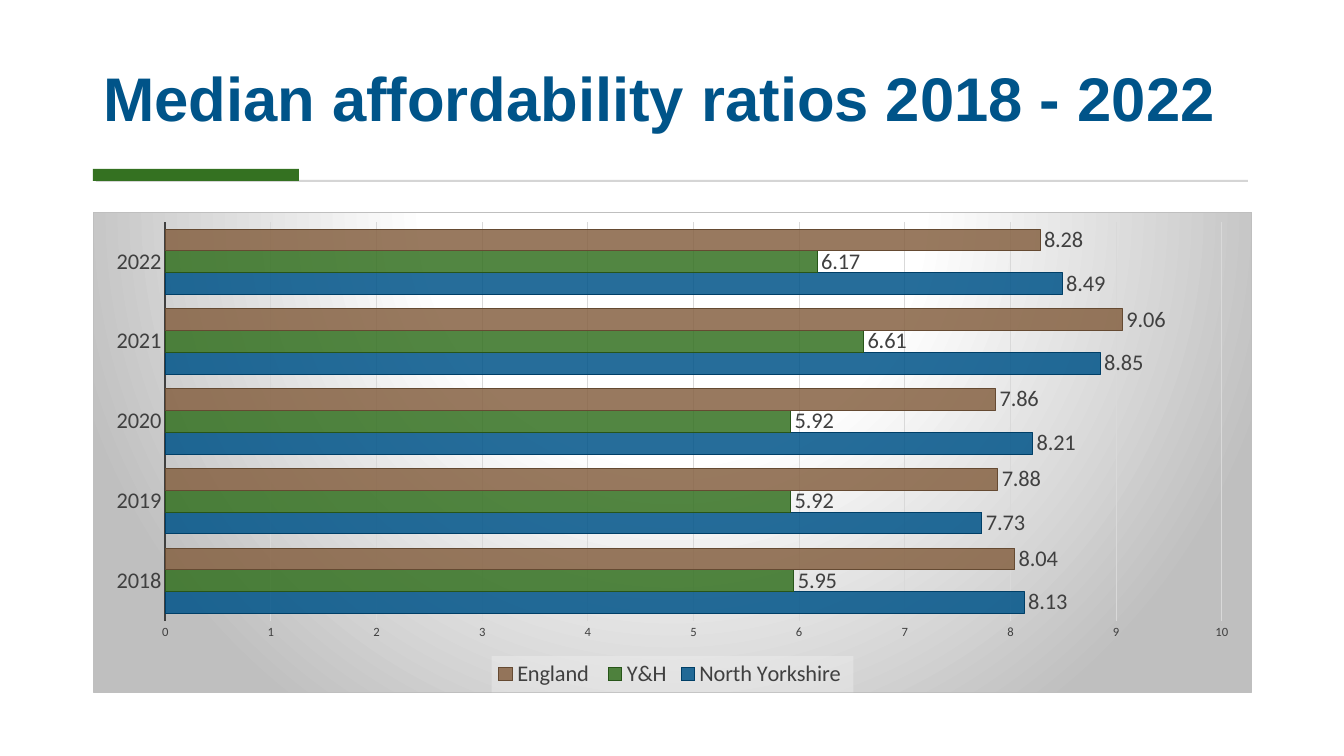
from dataclasses import dataclass

from lxml.etree import SubElement
from pptx import Presentation
from pptx.chart.chart import Chart
from pptx.chart.data import CategoryChartData
from pptx.dml.color import RGBColor
from pptx.dml.fill import FillFormat
from pptx.dml.line import LineFormat
from pptx.enum.chart import XL_CHART_TYPE, XL_LABEL_POSITION, XL_LEGEND_POSITION, XL_TICK_MARK
from pptx.enum.shapes import MSO_SHAPE
from pptx.enum.text import MSO_ANCHOR, MSO_AUTO_SIZE, PP_ALIGN
from pptx.oxml import parse_xml
from pptx.oxml.ns import nsdecls, qn
from pptx.slide import Slide
from pptx.text.text import Font
from pptx.util import Emu, Pt

SLIDE_WIDTH, SLIDE_HEIGHT = 1344, 756
EMU_PER_PX = 12192000 / SLIDE_WIDTH
BLUE, GREEN, BROWN = "005489", "347121", "866243"
TEXT_GREY, GRID_GREY, BORDER_GREY = "404040", "D9D9D9", "BFBFBF"
YEARS = ["2018", "2019", "2020", "2021", "2022"]


@dataclass(frozen=True)
class Box:
    left: int
    top: int
    width: int
    height: int

    def emu(self) -> list[Emu]:
        return [px(n) for n in (self.left, self.top, self.width, self.height)]


@dataclass(frozen=True)
class Bar:
    box: Box
    color: str


@dataclass(frozen=True)
class Region:
    name: str
    ratios: list[float]
    color: str
    outline: str


TITLE_BOX = Box(93, 28, 1158, 112)
CHART_BOX = Box(93, 212, 1159, 481)
BARS = [
    Bar(Box(96, 180, 1152, 2), "D5D5D5"),
    Bar(Box(93, 169, 206, 12), GREEN),
]
REGIONS = [
    Region("North Yorkshire ", [8.13, 7.73, 8.21, 8.85, 8.49], BLUE, "003F67"),
    Region("Y&H", [5.95, 5.92, 5.92, 6.61, 6.17], GREEN, "275519"),
    Region("England ", [8.04, 7.88, 7.86, 9.06, 8.28], BROWN, "654A32"),
]
CHART_FRAME = f"""<c:spPr {nsdecls("c", "a")}>
  <a:gradFill>
    <a:gsLst>
      <a:gs pos="0"><a:srgbClr val="FFFFFF"/></a:gs>
      <a:gs pos="39000"><a:srgbClr val="FFFFFF"/></a:gs>
      <a:gs pos="100000"><a:srgbClr val="{BORDER_GREY}"/></a:gs>
    </a:gsLst>
    <a:path path="circle">
      <a:fillToRect l="50000" t="-80000" r="50000" b="180000"/>
    </a:path>
  </a:gradFill>
  <a:ln w="9525"><a:solidFill><a:srgbClr val="{BORDER_GREY}"/></a:solidFill></a:ln>
</c:spPr>"""
LEGEND_FRAME = f"""<c:spPr {nsdecls("c", "a")}>
  <a:solidFill><a:srgbClr val="F2F2F2"><a:alpha val="39000"/></a:srgbClr></a:solidFill>
  <a:ln><a:noFill/></a:ln>
</c:spPr>"""
PLOT_FRAME = f'<c:spPr {nsdecls("c", "a")}><a:noFill/><a:ln><a:noFill/></a:ln></c:spPr>'


def px(length: int) -> Emu:
    return Emu(round(length * EMU_PER_PX))


def assign(target: object, formats: dict[str, object]) -> None:
    for name, value in formats.items():
        setattr(target, name, value)


def paint(fill: FillFormat, color: str, opacity: int = 100) -> None:
    fill.solid()
    fill.fore_color.rgb = RGBColor.from_string(color)
    if opacity < 100:
        # The alpha child belongs to the colour element of this fill.
        for element in fill._xPr.findall(f"{qn('a:solidFill')}/{qn('a:srgbClr')}"):
            SubElement(element, qn("a:alpha")).set("val", str(opacity * 1000))


def draw_line(line: LineFormat, color: str, width: float) -> None:
    paint(line.fill, color)
    line.width = Pt(width)


def set_font(font: Font, size: int, color: str, name: str = "Calibri", bold: bool = False) -> None:
    assign(font, {"size": Pt(size), "name": name, "bold": bold})
    paint(font.fill, color)


def add_title(page: Slide) -> None:
    title = page.shapes.title
    assign(title, dict(zip(("left", "top", "width", "height"), TITLE_BOX.emu())))
    frame = title.text_frame
    frame.text = "Median affordability ratios 2018 - 2022"
    assign(frame, {
        "vertical_anchor": MSO_ANCHOR.BOTTOM,
        "word_wrap": True,
        "auto_size": MSO_AUTO_SIZE.NONE,
    })
    para = frame.paragraphs[0]
    assign(para, {"alignment": PP_ALIGN.LEFT, "line_spacing": 0.9})
    set_font(para.runs[0].font, 44, BLUE, "Arial", True)


def add_bar(page: Slide, bar: Bar) -> None:
    shape = page.shapes.add_shape(MSO_SHAPE.RECTANGLE, *bar.box.emu())
    shape.shadow.inherit = False
    paint(shape.fill, bar.color)
    shape.line.fill.background()


def format_axes(chart: Chart) -> None:
    years, ratios = chart.category_axis, chart.value_axis
    for axis, size in ((years, 16), (ratios, 9)):
        assign(axis, {
            "major_tick_mark": XL_TICK_MARK.NONE,
            "minor_tick_mark": XL_TICK_MARK.NONE,
        })
        set_font(axis.tick_labels.font, size, TEXT_GREY)
    draw_line(years.format.line, TEXT_GREY, 1.5)
    assign(ratios, {"minimum_scale": 0, "maximum_scale": 10, "major_unit": 1})
    ratios.format.line.fill.background()
    draw_line(ratios.major_gridlines.format.line, GRID_GREY, 0.75)


def format_series(chart: Chart) -> None:
    plot = chart.plots[0]
    assign(plot, {"gap_width": 65, "overlap": 0, "vary_by_categories": False})
    for series, region in zip(plot.series, REGIONS):
        paint(series.format.fill, region.color, 85)
        draw_line(series.format.line, region.outline, 0.75)
        labels = series.data_labels
        assign(labels, {"show_value": True, "position": XL_LABEL_POSITION.OUTSIDE_END})
        set_font(labels.font, 16, TEXT_GREY)


def format_legend(chart: Chart) -> None:
    chart.has_legend = True
    legend = chart.legend
    assign(legend, {"position": XL_LEGEND_POSITION.BOTTOM, "include_in_layout": False})
    set_font(legend.font, 16, TEXT_GREY)
    legend._element.find(qn("c:txPr")).addprevious(parse_xml(LEGEND_FRAME))


def add_ratio_chart(page: Slide) -> None:
    data = CategoryChartData()
    data.categories = YEARS
    for region in REGIONS:
        data.add_series(region.name, region.ratios)
    chart = page.shapes.add_chart(
        XL_CHART_TYPE.BAR_CLUSTERED, *CHART_BOX.emu(), data
    ).chart
    chart.has_title = False
    set_font(chart.font, 10, "000000")
    format_axes(chart)
    format_series(chart)
    format_legend(chart)
    space = chart._chartSpace
    space.find(qn("c:txPr")).addprevious(parse_xml(CHART_FRAME))
    space.find(f"{qn('c:chart')}/{qn('c:plotArea')}").append(parse_xml(PLOT_FRAME))


def main() -> None:
    deck = Presentation()
    assign(deck, {"slide_width": px(SLIDE_WIDTH), "slide_height": px(SLIDE_HEIGHT)})
    page = deck.slides.add_slide(deck.slide_layouts.get_by_name("Title Only"))
    add_title(page)
    for bar in BARS:
        add_bar(page, bar)
    add_ratio_chart(page)
    deck.save("out.pptx")


if __name__ == "__main__":
    main()
